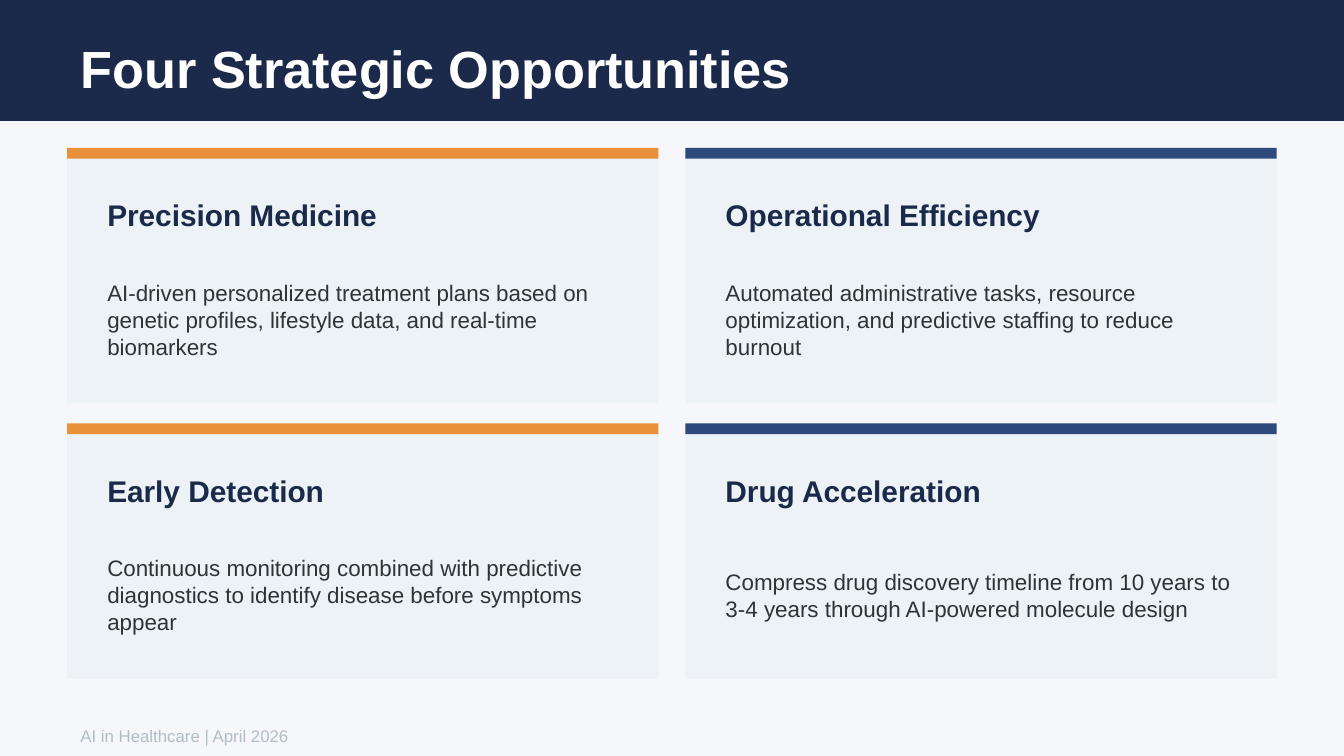
"""Build a slide with a title banner and a two-by-two grid of cards."""
import pptx
import pptx.dml.color
import pptx.enum.shapes
import pptx.enum.text
import pptx.util

WIDTH = 10
HEIGHT = WIDTH * 9 / 16
MARGIN = 0.5
NAVY, BLUE, ORANGE = "1B2A4A", "2E4A7A", "E8913A"
PAPER, CARD, INK, MUTED, WHITE = "F5F7FA", "EDF2F7", "2D3436", "B0BEC5", "FFFFFF"

CARDS = [
    ("Precision Medicine",
     "AI-driven personalized treatment plans based on genetic profiles, "
     "lifestyle data, and real-time biomarkers"),
    ("Operational Efficiency",
     "Automated administrative tasks, resource optimization, and predictive "
     "staffing to reduce burnout"),
    ("Early Detection",
     "Continuous monitoring combined with predictive diagnostics to identify "
     "disease before symptoms appear"),
    ("Drug Acceleration",
     "Compress drug discovery timeline from 10 years to 3-4 years through "
     "AI-powered molecule design"),
]


def paint(fill, colour):
    """Give a fill one solid colour from a hex string."""
    fill.solid()
    fill.fore_color.rgb = pptx.dml.color.RGBColor.from_string(colour)


def inches(box):
    """Convert left, top, width and height to lengths."""
    return [pptx.util.Inches(length) for length in box]


def add_block(page, box, colour):
    """Add a plain filled rectangle."""
    block = page.shapes.add_shape(pptx.enum.shapes.MSO_SHAPE.RECTANGLE, *inches(box))
    block.shadow.inherit = False
    block.line.fill.background()
    paint(block.fill, colour)
    return block


def write(shape, text, size, colour, bold=False):
    """Write one left-aligned paragraph, centred vertically in a shape."""
    frame = shape.text_frame
    frame.word_wrap = True
    frame.auto_size = pptx.enum.text.MSO_AUTO_SIZE.NONE
    frame.vertical_anchor = pptx.enum.text.MSO_ANCHOR.MIDDLE
    para = frame.paragraphs[0]
    para.alignment = pptx.enum.text.PP_ALIGN.LEFT
    span = para.add_run()
    span.text = text
    span.font.name = "Arial"
    span.font.size = pptx.util.Pt(size)
    span.font.bold = bold
    paint(span.font.fill, colour)


def add_text(page, box, text, **style):
    """Add a text box with formatted text."""
    write(page.shapes.add_textbox(*inches(box)), text, **style)


def add_banner(page, box, text):
    """Place the title placeholder over a full-width band."""
    left, top, width, height = box
    title = page.shapes.title
    title.left, title.top, title.width, title.height = inches(
        (left + MARGIN, top + 0.2, width - 2 * MARGIN, height * 2 / 3))
    write(title, text, size=28, colour=WHITE, bold=True)
    title.element.addprevious(add_block(page, box, NAVY).element)


def add_card(page, box, heading, body, accent):
    """Add a card with an accent bar, a heading and a description."""
    left, top, width, height = box
    inset = 0.2
    inner = width - 2 * inset
    add_block(page, box, CARD)
    add_block(page, (left, top, width, 0.08), accent)
    add_text(page, (left + inset, top + 0.25, inner, 0.5), heading,
             size=16, colour=NAVY, bold=True)
    add_text(page, (left + inset, top + 0.8, inner, height / 2), body,
             size=12, colour=INK)


def add_card_grid(page, box, cards, columns=2, gaps=(0.2, 0.15)):
    """Lay the cards out row by row, with one accent for each column."""
    left, top, width, height = box
    rows = len(cards) // columns
    card_width = (width - gaps[0] * (columns - 1)) / columns
    card_height = (height - gaps[1] * (rows - 1)) / rows
    for index, (heading, body) in enumerate(cards):
        row, column = divmod(index, columns)
        cell = (left + column * (card_width + gaps[0]),
                top + row * (card_height + gaps[1]), card_width, card_height)
        add_card(page, cell, heading, body, (ORANGE, BLUE)[column])


def main():
    """Build and save the deck."""
    deck = pptx.Presentation()
    deck.slide_width, deck.slide_height = inches((WIDTH, HEIGHT))
    page = deck.slides.add_slide(deck.slide_layouts.get_by_name("Title Only"))
    paint(page.background.fill, PAPER)
    content_width = WIDTH - 2 * MARGIN
    add_banner(page, (0, 0, WIDTH, 0.9), "Four Strategic Opportunities")
    add_card_grid(page, (MARGIN, 1.1, content_width, 3.95), CARDS)
    add_text(page, (MARGIN, 5.35, content_width, 0.25),
             "AI in Healthcare | April 2026", size=9, colour=MUTED)
    deck.save("out.pptx")


if __name__ == "__main__":
    main()
